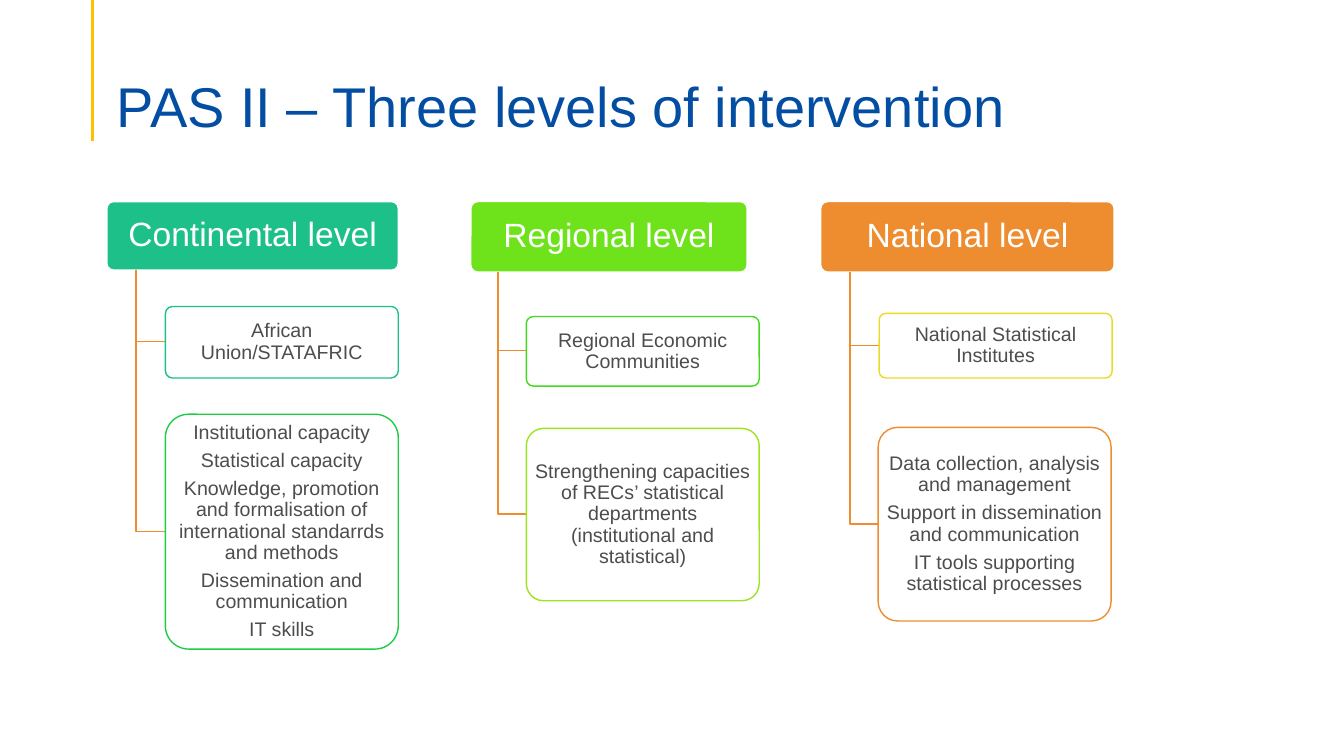
import dataclasses

import lxml.etree
import pptx
import pptx.dml.color
import pptx.enum.shapes
import pptx.enum.text
import pptx.oxml.ns
import pptx.util

EMU_PER_PX = 9144  # 100 px to the inch


@dataclasses.dataclass(frozen=True)
class Theme:
    font: str = "Arial"
    title: str = "034EA2"
    accent: str = "FFC000"
    branch: str = "ED8D2F"
    body: str = "4D4D4D"
    white: str = "FFFFFF"
    title_size: int = 40
    header_size: int = 24
    body_size: int = 14
    paragraph_gap: int = 5


THEME = Theme()
ITEM_WIDTH = 231
HEADER_TOP = 200

# Each level: header box, then items as (left, top, height, outline, paragraphs)
LEVELS = [
    {
        "name": "Continental level", "left": 106, "width": 289, "height": 68, "fill": "1EC08A",
        "items": [
            (164, 304, 71, "1EC08A", ["African Union/STATAFRIC"]),
            (164, 411, 233, "1DCD46", [
                "Institutional capacity",
                "Statistical capacity",
                "Knowledge, promotion and formalisation of international standarrds and methods",
                "Dissemination and communication",
                "IT skills",
            ]),
        ],
    },
    {
        "name": "Regional level", "left": 467, "width": 274, "height": 70, "fill": "6EE21B",
        "items": [
            (522, 314, 69, "42DB1C", ["Regional Economic Communities"]),
            (522, 425, 171, "9DE51E", [
                "Strengthening capacities of RECs’ statistical departments "
                "(institutional and statistical)",
            ]),
        ],
    },
    {
        "name": "National level", "left": 814, "width": 291, "height": 70, "fill": "ED8D2F",
        "items": [
            (872, 311, 64, "E9DC26", ["National Statistical Institutes"]),
            (871, 424, 192, "ED8D2F", [
                "Data collection, analysis and management",
                "Support in dissemination and communication",
                "IT tools supporting statistical processes",
            ]),
        ],
    },
]


def px(length):
    return pptx.util.Emu(length * EMU_PER_PX)


def rgb(color):
    return pptx.dml.color.RGBColor.from_string(color)


def write_text(shape, paragraphs, *, size, color, insets,
               align=pptx.enum.text.PP_ALIGN.CENTER,
               anchor=pptx.enum.text.MSO_ANCHOR.MIDDLE):
    """Fill a shape with paragraphs; insets are left, top, right, bottom."""
    frame = shape.text_frame
    frame.word_wrap = True
    frame.auto_size = pptx.enum.text.MSO_AUTO_SIZE.NONE
    frame.vertical_anchor = anchor
    (frame.margin_left, frame.margin_top,
     frame.margin_right, frame.margin_bottom) = map(px, insets)
    for index, text in enumerate(paragraphs):
        para = frame.add_paragraph() if index else frame.paragraphs[0]
        para.alignment = align
        para.line_spacing = 0.9
        para.space_before = pptx.util.Pt(THEME.paragraph_gap if index else 0)
        span = para.add_run()
        span.text = text
        span.font.name = THEME.font
        span.font.size = pptx.util.Pt(size)
        span.font.color.rgb = rgb(color)


def add_rounded_box(page, left, top, width, height, *, fill, line, opacity=100):
    box = page.shapes.add_shape(pptx.enum.shapes.MSO_SHAPE.ROUNDED_RECTANGLE,
                                px(left), px(top), px(width), px(height))
    box.shadow.inherit = False
    box.adjustments[0] = 0.1
    box.fill.solid()
    box.fill.fore_color.rgb = rgb(fill)
    box.line.color.rgb = rgb(line)
    box.line.width = pptx.util.Pt(1)
    if opacity < 100:
        color = box.element.spPr.find(pptx.oxml.ns.qn("a:solidFill"))[0]
        alpha = lxml.etree.SubElement(color, pptx.oxml.ns.qn("a:alpha"))
        alpha.set("val", str(opacity * 1000))
    return box


def add_branch(page, trunk, start, end, item_left):
    """Draw an elbow down from a header and across to an item."""
    builder = page.shapes.build_freeform(trunk, start, scale=EMU_PER_PX)
    builder.add_line_segments([(trunk, end), (item_left, end)], close=False)
    branch = builder.convert_to_shape()
    branch.shadow.inherit = False
    branch.fill.background()
    branch.line.color.rgb = rgb(THEME.branch)
    branch.line.width = pptx.util.Pt(1)


def add_title(page, text):
    # Accent rule beside the title
    rule = page.shapes.add_connector(pptx.enum.shapes.MSO_CONNECTOR.STRAIGHT,
                                     px(92), px(0), px(92), px(140))
    rule.line.color.rgb = rgb(THEME.accent)
    rule.line.width = pptx.util.Pt(2.25)
    lxml.etree.SubElement(rule._element.spPr, pptx.oxml.ns.qn("a:effectLst"))

    title = page.shapes.title
    title.left, title.top, title.width, title.height = map(px, (106, 53, 1150, 86))
    write_text(title, [text], size=THEME.title_size, color=THEME.title,
               insets=(10, 5, 10, 0), align=pptx.enum.text.PP_ALIGN.LEFT,
               anchor=pptx.enum.text.MSO_ANCHOR.BOTTOM)


def add_level(page, level):
    # Header
    left, width, height = level["left"], level["width"], level["height"]
    header = add_rounded_box(page, left, HEADER_TOP, width, height,
                             fill=level["fill"], line=THEME.white)
    write_text(header, [level["name"]], size=THEME.header_size,
               color=THEME.white, insets=(5, 3, 5, 3))

    # Items hanging from a trunk one tenth of the way along the header
    trunk = left + round(width / 10)
    for item_left, top, item_height, outline, paragraphs in level["items"]:
        add_branch(page, trunk, HEADER_TOP + height, top + item_height // 2, item_left)
        item = add_rounded_box(page, item_left, top, ITEM_WIDTH, item_height,
                               fill=THEME.white, line=outline, opacity=90)
        write_text(item, paragraphs, size=THEME.body_size, color=THEME.body,
                   insets=(3, 2, 3, 2))


def main():
    deck = pptx.Presentation()
    deck.slide_width, deck.slide_height = px(1333), px(750)
    page = deck.slides.add_slide(deck.slide_layouts.get_by_name("Title Only"))
    add_title(page, "PAS II – Three levels of intervention")
    for level in LEVELS:
        add_level(page, level)
    deck.save("out.pptx")


if __name__ == "__main__":
    main()
